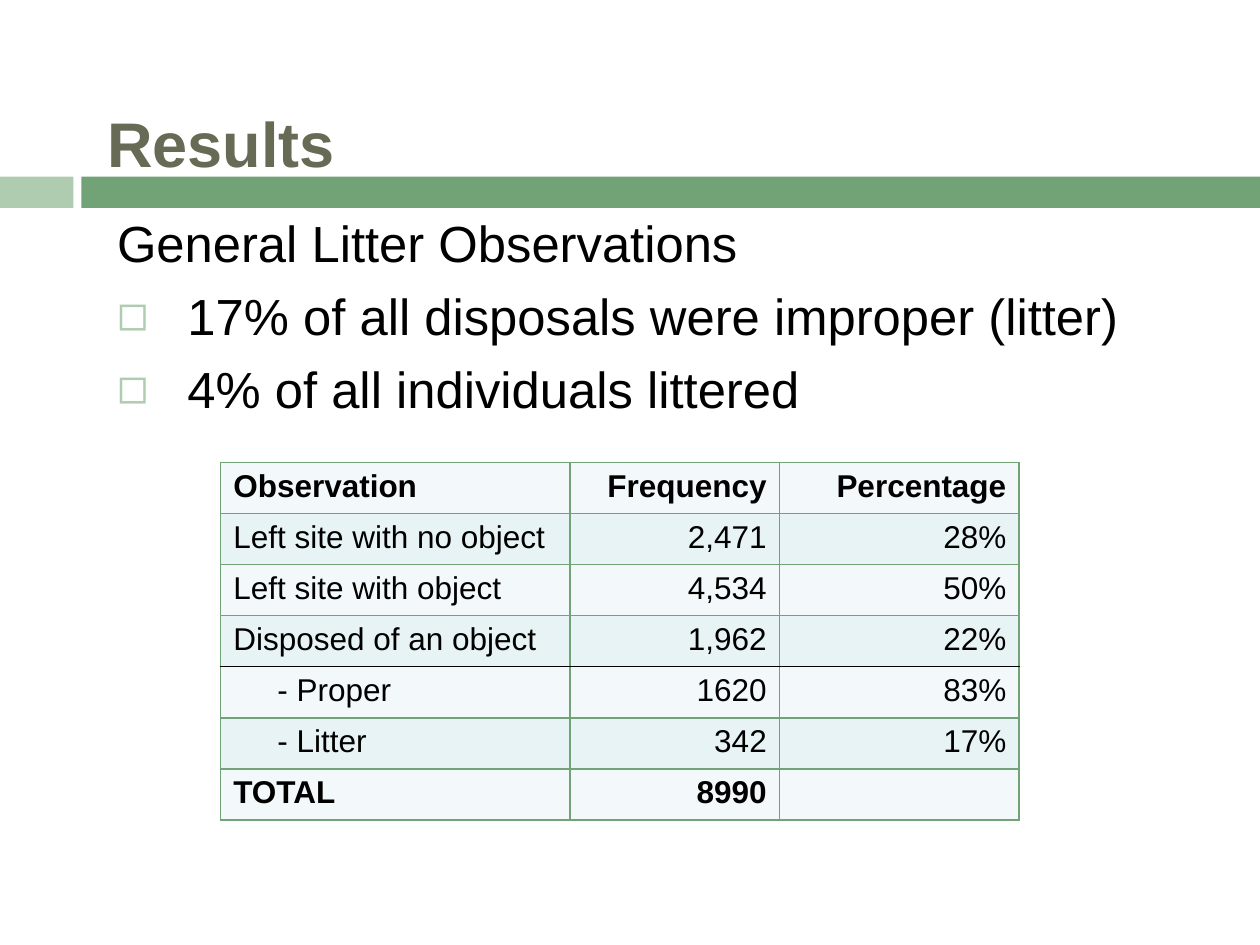
from typing import NamedTuple

from lxml.etree import SubElement
from pptx import Presentation
from pptx.dml.color import RGBColor
from pptx.enum.shapes import MSO_SHAPE
from pptx.enum.text import MSO_ANCHOR, PP_ALIGN
from pptx.oxml.ns import qn
from pptx.util import Cm, Pt

FONT = "Arial"
BLACK = "000000"
OLIVE = "676A55"
GREEN = "72A376"
PALE_GREEN = "B0CCB0"
ROW_FILLS = ("F3F9FA", "E7F3F4")
ROW_HEIGHT = 1.03
COLUMN_WIDTHS = (7.04, 4.22, 4.83)


class Area(NamedTuple):
    """Position and size in centimetres."""
    left: float
    top: float
    width: float
    height: float

    def lengths(self):
        return [Cm(value) for value in self]


class Bar(NamedTuple):
    area: Area
    color: str


class Line(NamedTuple):
    text: str
    bulleted: bool


class Row(NamedTuple):
    label: str
    frequency: str
    percentage: str
    bold: bool = False
    indent: float = 0
    top: str = GREEN
    bottom: str = GREEN


BARS = (
    Bar(Area(0, 3.56, 1.48, 0.63), PALE_GREEN),
    Bar(Area(1.64, 3.56, 23.76, 0.63), GREEN),
)
LINES = (
    Line("General Litter Observations", False),
    Line("17% of all disposals were improper (litter)", True),
    Line("4% of all individuals littered", True),
)
ROWS = (
    Row("Observation", "Frequency", "Percentage", bold=True),
    Row("Left site with no object", "2,471", "28%"),
    Row("Left site with object", "4,534", "50%"),
    Row("Disposed of an object", "1,962", "22%", bottom=BLACK),
    Row("- Proper", "1620", "83%", indent=0.89, top=BLACK),
    Row("- Litter", "342", "17%", indent=0.89),
    Row("TOTAL", "8990", "", bold=True),
)


def rgb(color: str) -> RGBColor:
    return RGBColor.from_string(color)


def add_run(para, text: str, size: float, color: str = BLACK, bold: bool = False) -> None:
    span = para.add_run()
    span.text = text
    span.font.name = FONT
    span.font.size = Pt(size)
    span.font.bold = bold
    span.font.color.rgb = rgb(color)


def add_bar(page, bar: Bar) -> None:
    shape = page.shapes.add_shape(MSO_SHAPE.RECTANGLE, *bar.area.lengths())
    shape.shadow.inherit = False
    shape.fill.solid()
    shape.fill.fore_color.rgb = rgb(bar.color)
    shape.line.fill.background()


def add_text_frame(page, area: Area, anchor: MSO_ANCHOR):
    frame = page.shapes.add_textbox(*area.lengths()).text_frame
    frame.word_wrap = True
    frame.vertical_anchor = anchor
    frame.margin_left = frame.margin_right = Cm(0.25)
    frame.margin_top = frame.margin_bottom = Cm(0.25)
    return frame


def set_indent(para, left: float, first: float = 0) -> None:
    properties = para._p.get_or_add_pPr()
    properties.set("marL", str(Cm(left)))
    properties.set("indent", str(Cm(first)))


def add_bullet(para) -> None:
    properties = para._p.get_or_add_pPr()
    color = SubElement(properties, qn("a:buClr"))
    SubElement(color, qn("a:srgbClr"), val=PALE_GREEN)
    SubElement(properties, qn("a:buFont"), typeface=FONT)
    SubElement(properties, qn("a:buChar"), char="◻")


def add_lines(page, area: Area) -> None:
    frame = add_text_frame(page, area, MSO_ANCHOR.TOP)
    for index, line in enumerate(LINES):
        para = frame.add_paragraph() if index else frame.paragraphs[0]
        para.space_before = Pt(7)
        set_indent(para, 1.42, -1.42)
        if line.bulleted:
            add_bullet(para)
        add_run(para, line.text, 29)


def set_borders(cell, top: str, bottom: str) -> None:
    """Draw the four borders; they must precede the cell's fill."""
    properties = cell._tc.get_or_add_tcPr()
    for side, color in (("L", GREEN), ("R", GREEN), ("T", top), ("B", bottom)):
        border = SubElement(properties, qn(f"a:ln{side}"), w=str(Pt(1)))
        fill = SubElement(border, qn("a:solidFill"))
        SubElement(fill, qn("a:srgbClr"), val=color)


def fill_row(cells, row: Row, fill: str) -> None:
    for column, text in enumerate((row.label, row.frequency, row.percentage)):
        cell = cells[column]
        set_borders(cell, row.top, row.bottom)
        cell.fill.solid()
        cell.fill.fore_color.rgb = rgb(fill)
        para = cell.text_frame.paragraphs[0]
        if column:
            para.alignment = PP_ALIGN.RIGHT
        elif row.indent:
            set_indent(para, row.indent)
        if text:
            add_run(para, text, 18, bold=row.bold)


def add_observations(page, left: float, top: float) -> None:
    area = Area(left, top, sum(COLUMN_WIDTHS), ROW_HEIGHT * len(ROWS))
    table = page.shapes.add_table(len(ROWS), len(COLUMN_WIDTHS), *area.lengths()).table
    for column, width in zip(table.columns, COLUMN_WIDTHS):
        column.width = Cm(width)
    for index, row in enumerate(ROWS):
        table.rows[index].height = Cm(ROW_HEIGHT)
        fill_row(table.rows[index].cells, row, ROW_FILLS[index % 2])


def main() -> None:
    deck = Presentation()
    deck.slide_width, deck.slide_height = Cm(25.4), Cm(19.05)
    page = deck.slides.add_slide(deck.slide_layouts[6])
    for bar in BARS:
        add_bar(page, bar)
    title = add_text_frame(page, Area(1.91, 1.27, 21.59, 3.18), MSO_ANCHOR.MIDDLE)
    add_run(title.paragraphs[0], "Results", 36, OLIVE, bold=True)
    add_lines(page, Area(2.11, 4.01, 23.29, 4.65))
    add_observations(page, 4.45, 9.32)
    deck.save("out.pptx")


if __name__ == "__main__":
    main()
